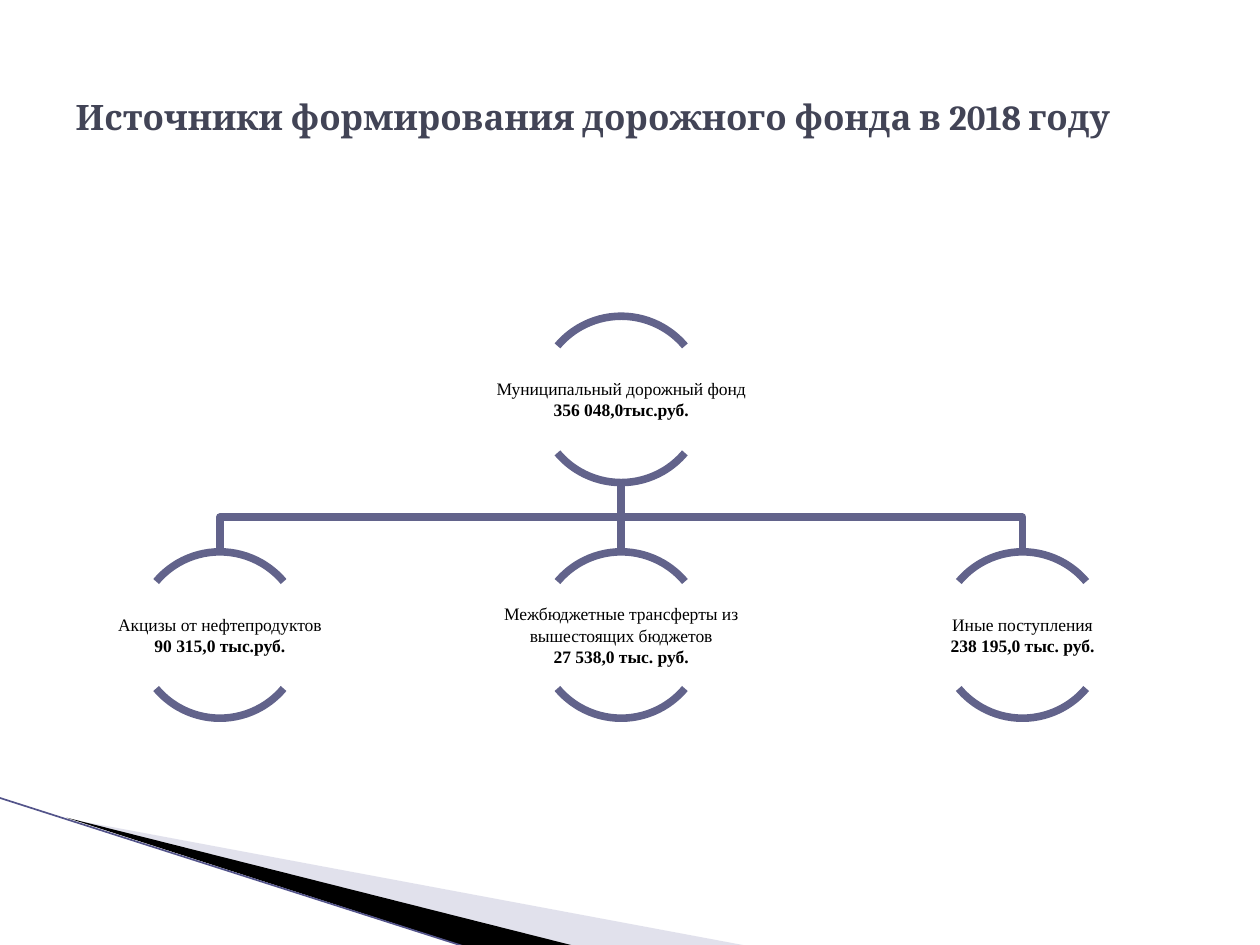
from lxml.etree import SubElement
from pptx import Presentation
from pptx.dml.color import RGBColor
from pptx.enum.shapes import MSO_CONNECTOR, MSO_SHAPE
from pptx.enum.text import MSO_ANCHOR, PP_ALIGN
from pptx.oxml.ns import qn
from pptx.util import Inches, Pt

COLORS = {
    "title": "424456",
    "diagram": "62638B",
    "text": "000000",
    "pale wedge": "B6B6D1",
    "black wedge": "000000",
    "edge": "53548A",
}


def style_line(shape, color, width):
    shape.line.color.rgb = RGBColor.from_string(COLORS[color])
    shape.line.width = Pt(width)
    if hasattr(shape, "shadow"):
        shape.shadow.inherit = False
    else:
        SubElement(shape._element.spPr, qn("a:effectLst"))


def add_outline(points, close):
    corners = [(Inches(x), Inches(y)) for x, y in points]
    builder = page.shapes.build_freeform(*corners[0])
    builder.add_line_segments(corners[1:], close=close)
    shape = builder.convert_to_shape()
    shape.shadow.inherit = False
    return shape


deck = Presentation()
deck.slide_width, deck.slide_height = Inches(10), Inches(7.5)
page = deck.slides.add_slide(deck.slide_layouts[5])

# Corner decoration
wedges = [
    ("pale wedge", [(0.55, 6.5), (5.95, 7.51), (4.56, 7.51)]),
    ("black wedge", [(0.53, 6.49), (4.57, 7.51), (3.72, 7.52)]),
]
for color, points in wedges:
    wedge = add_outline(points, close=True)
    wedge.fill.solid()
    wedge.fill.fore_color.rgb = RGBColor.from_string(COLORS[color])
    wedge.line.fill.background()
    if color == "pale wedge":
        tint = wedge._element.spPr.find(qn("a:solidFill"))[0]
        SubElement(tint, qn("a:alpha"), val="40000")
edge = page.shapes.add_connector(
    MSO_CONNECTOR.STRAIGHT, Inches(-0.01), Inches(6.33), Inches(3.71), Inches(7.52))
style_line(edge, "edge", 0.95)

# Title
title = page.shapes.title
title.left, title.top = Inches(0.5), Inches(0.3)
title.width, title.height = Inches(9), Inches(1.25)
title.text_frame.vertical_anchor = MSO_ANCHOR.MIDDLE
para = title.text_frame.paragraphs[0]
para.alignment = PP_ALIGN.LEFT
span = para.add_run()
span.text = "Источники формирования дорожного фонда в 2018 году"
span.font.name, span.font.size, span.font.bold = "Cambria", Pt(20), True
span.font.color.rgb = RGBColor.from_string(COLORS["title"])

# Tree geometry: one parent above three evenly spaced children
CENTER, STEP, CIRCLE = 4.93, 3.185, 1.32
PARENT_TOP, CHILD_TOP = 2.51, 4.38
LABEL_WIDTH, LABEL_HEIGHT = 2.63, 0.84
parent_bottom = PARENT_TOP + CIRCLE
branch = (parent_bottom + CHILD_TOP) / 2

# Branches
for side in (1, -1):
    child = CENTER + side * STEP
    elbow = add_outline([(CENTER, parent_bottom), (CENTER, branch),
                         (child, branch), (child, CHILD_TOP)], close=False)
    elbow.fill.background()
    style_line(elbow, "diagram", 4.33)
trunk = page.shapes.add_connector(
    MSO_CONNECTOR.STRAIGHT, Inches(CENTER), Inches(parent_bottom),
    Inches(CENTER), Inches(CHILD_TOP))
style_line(trunk, "diagram", 4.33)

# Nodes: column, top, name, amount
nodes = [
    (0, PARENT_TOP, "Муниципальный дорожный фонд", "356 048,0тыс.руб."),
    (-1, CHILD_TOP, "Акцизы от нефтепродуктов", "90 315,0 тыс.руб."),
    (0, CHILD_TOP, "Межбюджетные трансферты из вышестоящих бюджетов",
     "27 538,0 тыс. руб."),
    (1, CHILD_TOP, "Иные поступления", "238 195,0 тыс. руб."),
]
for column, top, name, amount in nodes:
    middle = CENTER + column * STEP
    for start, end in ((220, 320), (40, 140)):
        arc = page.shapes.add_shape(
            MSO_SHAPE.ARC, Inches(middle - CIRCLE / 2), Inches(top),
            Inches(CIRCLE), Inches(CIRCLE))
        # Angles are stored in 60000ths of a degree, adjustments in 100000ths
        arc.adjustments[0], arc.adjustments[1] = start * 0.6, end * 0.6
        arc.fill.background()
        style_line(arc, "diagram", 4.33)

    box = page.shapes.add_textbox(
        Inches(middle - LABEL_WIDTH / 2), Inches(top + (CIRCLE - LABEL_HEIGHT) / 2),
        Inches(LABEL_WIDTH), Inches(LABEL_HEIGHT))
    frame = box.text_frame
    frame.word_wrap = True
    frame.vertical_anchor = MSO_ANCHOR.MIDDLE
    frame.margin_left = frame.margin_right = Inches(0.01)
    frame.margin_top = frame.margin_bottom = Inches(0.01)
    for para, text, bold in ((frame.paragraphs[0], name, False),
                             (frame.add_paragraph(), amount, True)):
        para.alignment = PP_ALIGN.CENTER
        span = para.add_run()
        span.text = text
        span.font.name, span.font.size = "Times New Roman", Pt(10)
        span.font.bold = bold
        span.font.color.rgb = RGBColor.from_string(COLORS["text"])

deck.save("out.pptx")
